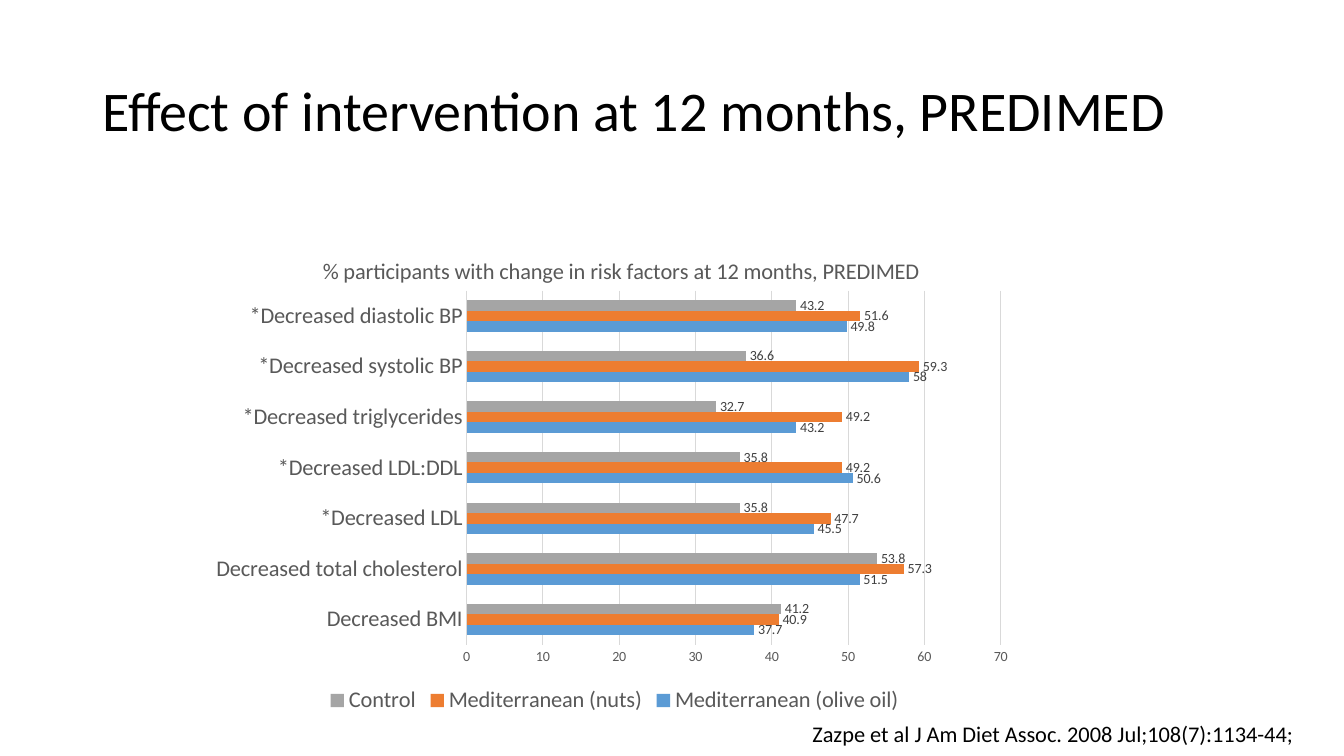
from lxml.etree import SubElement
from pptx import Presentation
from pptx.chart.data import CategoryChartData
from pptx.dml.color import RGBColor
from pptx.enum.chart import XL_CHART_TYPE, XL_LABEL_POSITION, XL_LEGEND_POSITION, XL_TICK_MARK
from pptx.enum.text import MSO_ANCHOR
from pptx.oxml.ns import qn
from pptx.util import Inches, Pt

FONT = "Calibri"
COLORS = {"text": "000000", "axis": "595959", "label": "404040", "grid": "D9D9D9",
          "olive_oil": "5B9BD5", "nuts": "ED7D31", "control": "A5A5A5"}
TITLE = "Effect of intervention at 12 months, PREDIMED"
CHART_TITLE = "% participants with change in risk factors at 12 months, PREDIMED"
CITATION = "Zazpe et al J Am Diet Assoc. 2008 Jul;108(7):1134-44;"
RISK_FACTORS = ["Decreased BMI", "Decreased total cholesterol", "*Decreased LDL",
                "*Decreased LDL:DDL", "*Decreased triglycerides",
                "*Decreased systolic BP", "*Decreased diastolic BP"]
DIETS = [
    ("Mediterranean (olive oil)", "olive_oil", [37.7, 51.5, 45.5, 50.6, 43.2, 58, 49.8]),
    ("Mediterranean (nuts)", "nuts", [40.9, 57.3, 47.7, 49.2, 49.2, 59.3, 51.6]),
    ("Control", "control", [41.2, 53.8, 35.8, 35.8, 32.7, 36.6, 43.2]),
]


def rgb(name):
    """Return the named palette colour."""
    return RGBColor.from_string(COLORS[name])


def set_font(font, size, color):
    """Apply the slide font at the given size and colour."""
    font.name, font.size, font.bold = FONT, Pt(size), False
    font.color.rgb = rgb(color)


def add_text(s, text, box, size=16, color="text", anchor=MSO_ANCHOR.TOP, spacing=1.0):
    """Add a wrapped text box with one formatted paragraph."""
    tf = s.shapes.add_textbox(*map(Inches, box)).text_frame
    tf.word_wrap, tf.vertical_anchor = True, anchor
    p = tf.paragraphs[0]
    p.line_spacing = spacing
    r = p.add_run()
    r.text = text
    set_font(r.font, size, color)


def set_layout(parent, target=None, **fractions):
    """Place a chart part by fractions of the chart area."""
    layout = parent.find(qn("c:layout"))
    if layout is None:
        layout = SubElement(parent, qn("c:layout"))
        before = parent.find(qn("c:tx"))
        if before is not None:
            before.addnext(layout)
        else:
            parent.insert(0, layout)
    manual = SubElement(layout, qn("c:manualLayout"))
    if target:
        SubElement(manual, qn("c:layoutTarget")).set("val", target)
    for side in ("x", "y"):
        SubElement(manual, qn(f"c:{side}Mode")).set("val", "edge")
    for key, value in fractions.items():
        SubElement(manual, qn(f"c:{key}")).set("val", str(value))


def style_axes(chart):
    """Format the category and value axes."""
    for axis, size in ((chart.category_axis, 16), (chart.value_axis, 10)):
        axis.major_tick_mark = axis.minor_tick_mark = XL_TICK_MARK.NONE
        set_font(axis.tick_labels.font, size, "axis")
    chart.category_axis.has_major_gridlines = False
    grid = chart.value_axis.major_gridlines
    for line in (chart.category_axis.format.line, grid.format.line):
        line.color.rgb, line.width = rgb("grid"), Pt(0.75)
    chart.value_axis.format.line.fill.background()
    chart.value_axis.minimum_scale, chart.value_axis.maximum_scale = 0, 70
    chart.value_axis.major_unit = 10


def style_series(plot):
    """Colour and label the bars of each diet."""
    plot.gap_width, plot.overlap, plot.vary_by_categories = 182, 0, False
    for series, (_, color, _) in zip(plot.series, DIETS):
        series.format.fill.solid()
        series.format.fill.fore_color.rgb = rgb(color)
        labels = series.data_labels
        labels.show_value, labels.position = True, XL_LABEL_POSITION.OUTSIDE_END
        set_font(labels.font, 10, "label")


def add_risk_chart(s, box):
    """Add the clustered bar chart of risk factor changes."""
    data = CategoryChartData()
    data.categories = RISK_FACTORS
    for name, _, values in DIETS:
        data.add_series(name, values)
    chart = s.shapes.add_chart(XL_CHART_TYPE.BAR_CLUSTERED, *map(Inches, box), data).chart
    set_font(chart.font, 10, "text")
    chart.has_title = True
    p = chart.chart_title.text_frame.paragraphs[0]
    r = p.add_run()
    r.text = CHART_TITLE
    set_font(r.font, 16, "axis")
    chart.has_legend = True
    chart.legend.position = XL_LEGEND_POSITION.BOTTOM
    chart.legend.include_in_layout = False
    set_font(chart.legend.font, 16, "axis")
    style_axes(chart)
    style_series(chart.plots[0])
    area = chart.element.find(qn("c:chart"))
    set_layout(area.find(qn("c:title")), x=0.14, y=0.05)
    set_layout(area.find(qn("c:plotArea")), "inner", x=0.32, y=0.13, w=0.65, h=0.72)


def main():
    """Build and save the slide."""
    prs = Presentation()
    prs.slide_width, prs.slide_height = Inches(13.33), Inches(7.5)
    s = prs.slides.add_slide(prs.slide_layouts[6])
    add_text(s, TITLE, (0.92, 0.4, 11.5, 1.45), size=40,
             anchor=MSO_ANCHOR.MIDDLE, spacing=0.9)
    add_risk_chart(s, (2.02, 2.25, 8.15, 4.88))
    add_text(s, CITATION, (7.96, 7.1, 5.16, 0.37))
    prs.save("out.pptx")


if __name__ == "__main__":
    main()
